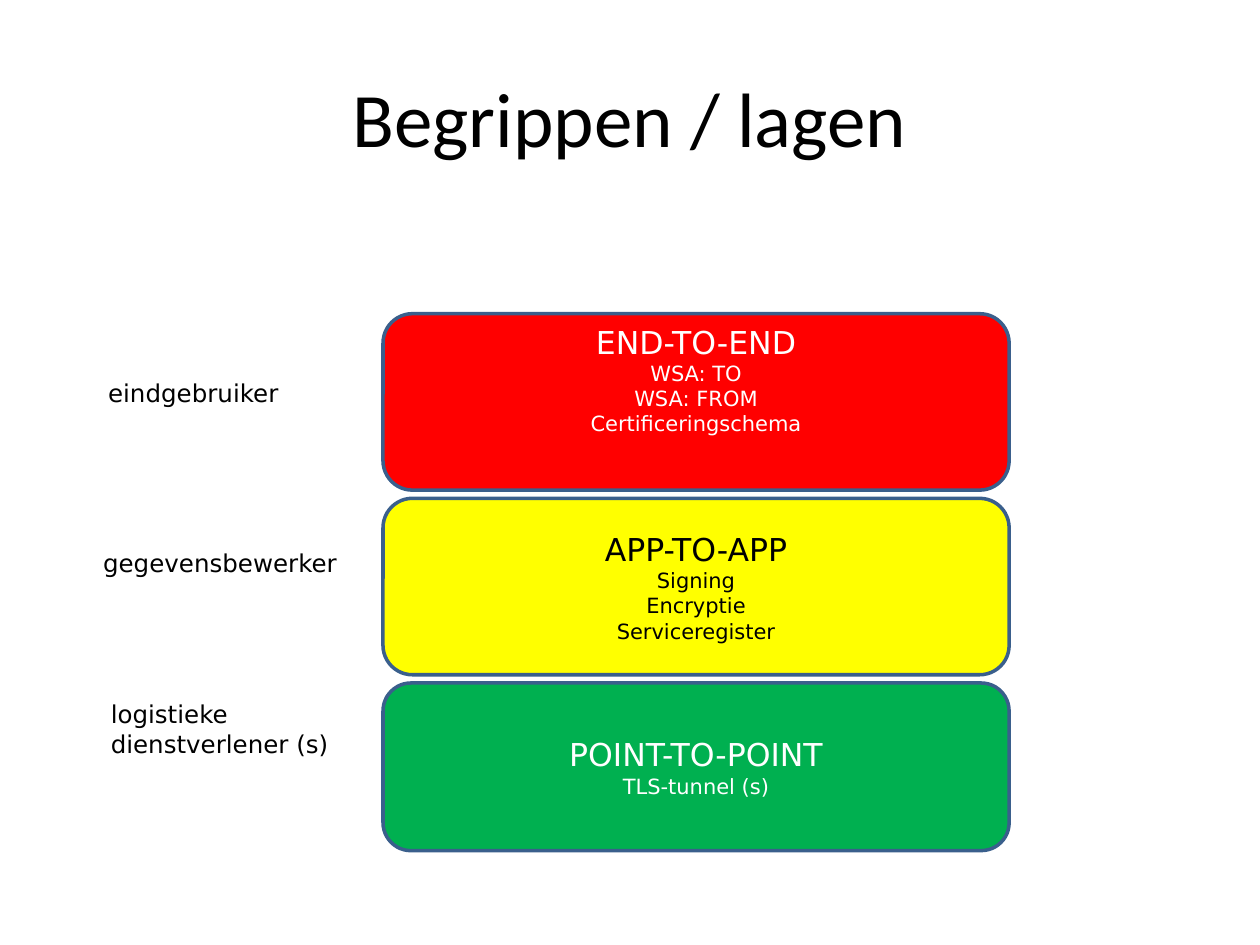
from pptx import Presentation
from pptx.dml.color import RGBColor
from pptx.enum.shapes import MSO_SHAPE
from pptx.enum.text import MSO_ANCHOR, PP_ALIGN
from pptx.util import Pt

WHITE = RGBColor(0xFF, 0xFF, 0xFF)
BLACK = RGBColor(0x00, 0x00, 0x00)
RED = RGBColor(0xFF, 0x00, 0x00)
YELLOW = RGBColor(0xFF, 0xFF, 0x00)
GREEN = RGBColor(0x00, 0xB0, 0x50)
OUTLINE = RGBColor(0x3A, 0x5F, 0x8C)

LAYER_LEFT = 218.9
LAYER_TOP = 179.3
LAYER_WIDTH = 357.8
LAYER_GAP = 4.7

LAYERS = [
    ("END-TO-END", ["WSA: TO", "WSA: FROM", "Certificeringschema"], RED, WHITE, 100.8, 29.2),
    ("APP-TO-APP", ["Signing", "Encryptie", "Serviceregister"], YELLOW, BLACK, 100.8, 3.6),
    ("POINT-TO-POINT", ["TLS-tunnel (s)"], GREEN, WHITE, 95.8, 3.6),
]

ROLES = [
    ("eindgebruiker", 54.7, 212.4, 146.9, 29.5),
    ("gegevensbewerker", 51.8, 309.6, 154.8, 36.7),
    ("logistieke dienstverlener (s)", 56.2, 396, 144.7, 49.7),
]


class SlideBuilder:
    title_font = "Calibri"
    body_font = "DejaVu Sans"

    def __init__(self, slide):
        self.slide = slide

    def format_paragraph(self, paragraph, size, color, font_name, alignment):
        paragraph.alignment = alignment
        for run in paragraph.runs:
            run.font.name = font_name
            run.font.size = Pt(size)
            run.font.color.rgb = color

    def add_text(self, text, left, top, width, height, size, font_name, alignment, anchor):
        shape = self.slide.shapes.add_textbox(Pt(left), Pt(top), Pt(width), Pt(height))
        text_frame = shape.text_frame
        text_frame.word_wrap = True
        text_frame.vertical_anchor = anchor
        text_frame.text = text
        self.format_paragraph(text_frame.paragraphs[0], size, BLACK, font_name, alignment)

    def add_title(self, text):
        self.add_text(text, 36, 21.6, 648, 90, 44, self.title_font, PP_ALIGN.CENTER, MSO_ANCHOR.MIDDLE)

    def add_role(self, text, left, top, width, height):
        self.add_text(text, left, top, width, height, 14, self.body_font, PP_ALIGN.LEFT, MSO_ANCHOR.TOP)

    def add_layer(self, heading, details, fill, color, top, height, bottom_margin):
        shape = self.slide.shapes.add_shape(
            MSO_SHAPE.ROUNDED_RECTANGLE, Pt(LAYER_LEFT), Pt(top), Pt(LAYER_WIDTH), Pt(height)
        )
        shape.shadow.inherit = False
        shape.fill.solid()
        shape.fill.fore_color.rgb = fill
        shape.line.color.rgb = OUTLINE
        shape.line.width = Pt(2)
        text_frame = shape.text_frame
        text_frame.word_wrap = True
        text_frame.vertical_anchor = MSO_ANCHOR.MIDDLE
        text_frame.margin_bottom = Pt(bottom_margin)
        text_frame.text = "\n".join([heading, *details])
        for index, paragraph in enumerate(text_frame.paragraphs):
            size = 12 if index else 18
            self.format_paragraph(paragraph, size, color, self.body_font, PP_ALIGN.CENTER)


def main():
    presentation = Presentation()
    presentation.slide_width = Pt(720)
    presentation.slide_height = Pt(540)
    builder = SlideBuilder(presentation.slides.add_slide(presentation.slide_layouts[6]))

    builder.add_title("Begrippen / lagen")
    top = LAYER_TOP
    for heading, details, fill, color, height, bottom_margin in LAYERS:
        builder.add_layer(heading, details, fill, color, top, height, bottom_margin)
        top += height + LAYER_GAP
    for role in ROLES:
        builder.add_role(*role)

    presentation.save("out.pptx")


if __name__ == "__main__":
    main()
